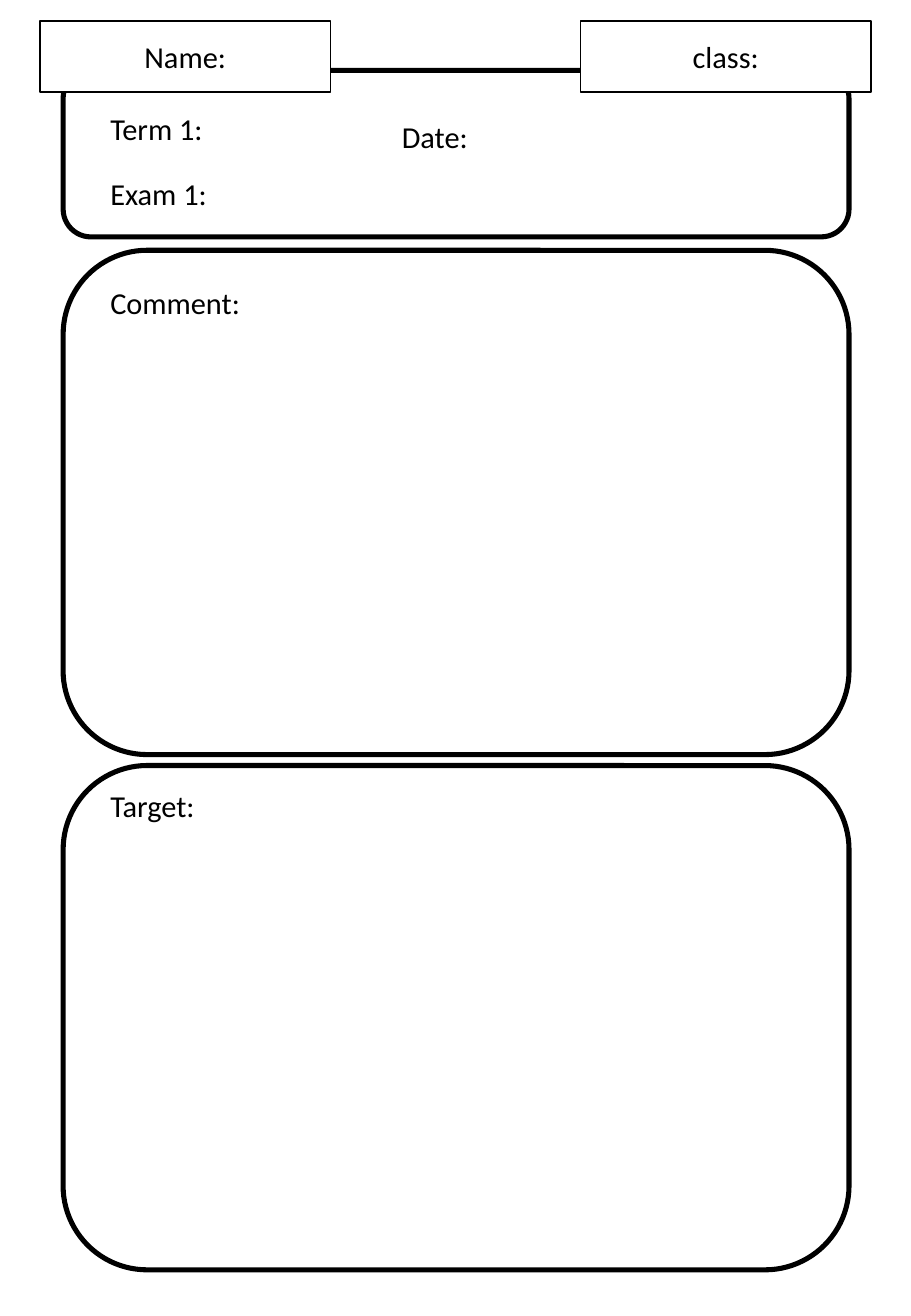
"""Build a one-page report form with name, class, comment and target boxes."""
from pptx import Presentation
from pptx.dml.color import RGBColor
from pptx.enum import shapes, text
from pptx.util import Inches, Pt

BLACK = RGBColor(0, 0, 0)
WHITE = RGBColor(255, 255, 255)

PANEL_LEFT, PANEL_WIDTH = 0.52, 6.47
PANELS = [(0.58, 1.37), (2.06, 4.15), (6.3, 4.15)]
TAB_TOP, TAB_WIDTH, TAB_HEIGHT = 0.17, 2.39, 0.59
TABS = [("Name:", 0.33), ("class:", 4.78)]
LABEL_WIDTH, LABEL_HEIGHT = 1.56, 0.4
LABELS = [
    ("Term 1:", 0.81, 0.86),
    ("Exam 1:", 0.81, 1.39),
    ("Date:", 3.21, 0.92),
    ("Comment:", 0.81, 2.29),
    ("Target:", 0.81, 6.43),
]
FONT = {"name": "Calibri", "size": Pt(18)}


def write(shape, wording, alignment):
    """Put one formatted line of text in a shape."""
    shape.text_frame.word_wrap = True
    paragraph = shape.text_frame.paragraphs[0]
    paragraph.alignment = alignment
    run = paragraph.add_run()
    run.text = wording
    for attribute, value in FONT.items():
        setattr(run.font, attribute, value)
    run.font.color.rgb = BLACK


def add_box(slide, kind, place, line_width):
    """Add a white box with a black outline."""
    shape = slide.shapes.add_shape(kind, *map(Inches, place))
    shape.shadow.inherit = False
    shape.fill.solid()
    shape.fill.fore_color.rgb = WHITE
    shape.line.color.rgb = BLACK
    shape.line.width = Pt(line_width)
    return shape


def main():
    """Lay out the form and save it."""
    presentation = Presentation()
    presentation.slide_width = Inches(7.5)
    presentation.slide_height = Inches(10.83)
    slide = presentation.slides.add_slide(presentation.slide_layouts[6])

    for top, height in PANELS:
        add_box(slide, shapes.MSO_SHAPE.ROUNDED_RECTANGLE,
                (PANEL_LEFT, top, PANEL_WIDTH, height), 3)

    for wording, left, top in LABELS:
        place = (left, top, LABEL_WIDTH, LABEL_HEIGHT)
        label = slide.shapes.add_textbox(*map(Inches, place))
        write(label, wording, text.PP_ALIGN.LEFT)

    for wording, left in TABS:
        tab = add_box(slide, shapes.MSO_SHAPE.RECTANGLE,
                      (left, TAB_TOP, TAB_WIDTH, TAB_HEIGHT), 1)
        tab.text_frame.vertical_anchor = text.MSO_ANCHOR.MIDDLE
        write(tab, wording, text.PP_ALIGN.CENTER)

    presentation.save("out.pptx")


if __name__ == "__main__":
    main()
